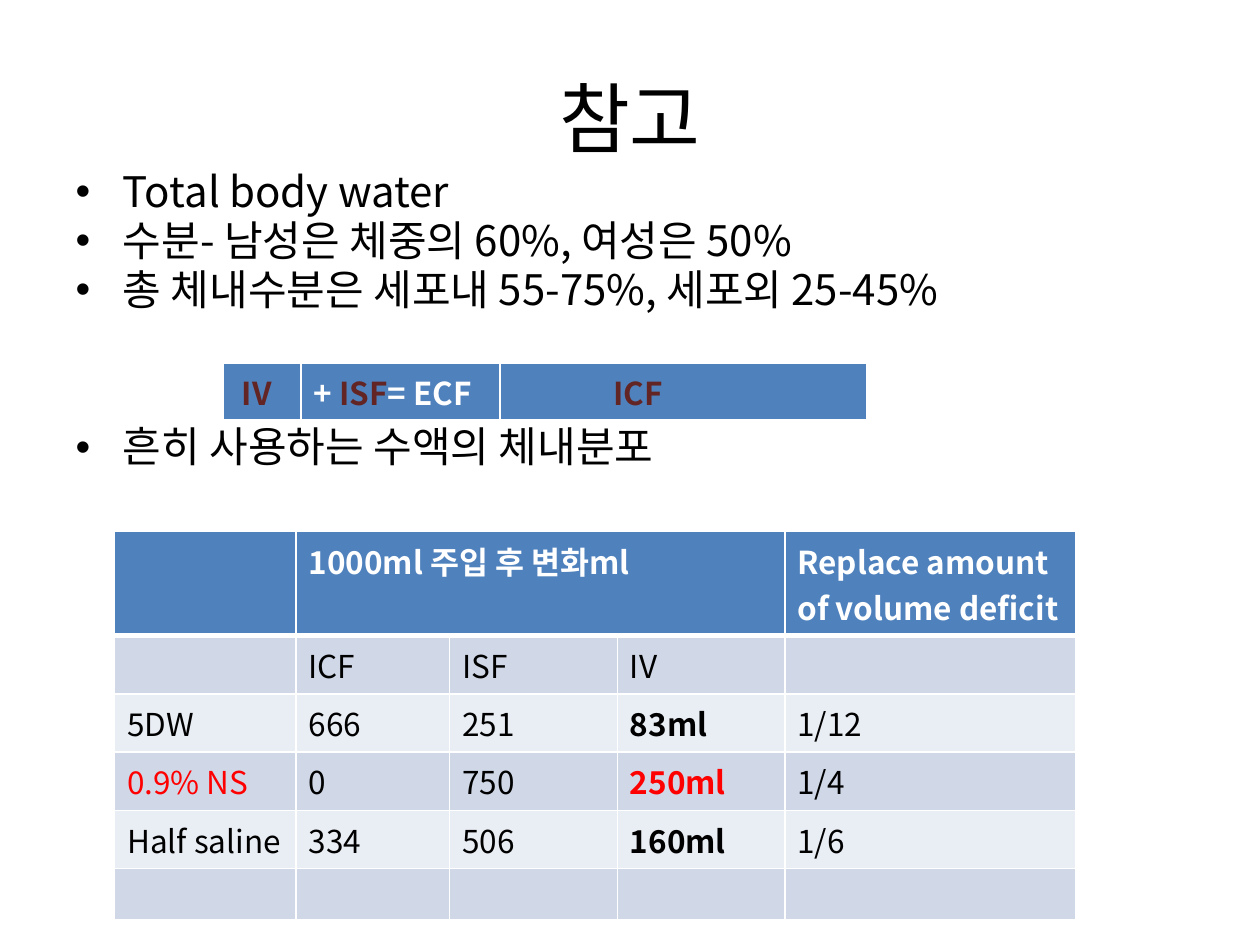
from dataclasses import dataclass

from lxml import etree
from pptx import Presentation
from pptx.dml.color import RGBColor
from pptx.enum.text import MSO_ANCHOR, PP_ALIGN
from pptx.oxml.ns import qn
from pptx.util import Inches, Pt

CENTER, MIDDLE = PP_ALIGN.CENTER, MSO_ANCHOR.MIDDLE

FONT = "Noto Sans CJK KR"
BLACK = RGBColor(0x00, 0x00, 0x00)
WHITE = RGBColor(0xFF, 0xFF, 0xFF)
RED = RGBColor(0xFF, 0x00, 0x00)
MAROON = RGBColor(0x63, 0x25, 0x23)
BLUE = RGBColor(0x4F, 0x81, 0xBD)
BAND_DARK = RGBColor(0xD0, 0xD8, 0xE8)
BAND_LIGHT = RGBColor(0xE9, 0xED, 0xF4)


@dataclass(frozen=True)
class Run:
    text: str
    color: RGBColor = BLACK
    bold: bool = False


@dataclass(frozen=True)
class Bullet:
    text: str
    space_before: float = 2


@dataclass(frozen=True)
class Compartment:
    width: float
    indent: float
    runs: tuple[Run, ...]


def add_run(paragraph, content: Run, size: float) -> None:
    run = paragraph.add_run()
    run.text = content.text
    font = run.font
    font.size, font.bold, font.name = Pt(size), content.bold, FONT
    font.color.rgb = content.color
    # Korean glyphs take the East Asian typeface
    east_asian = etree.SubElement(run._r.get_or_add_rPr(), qn("a:ea"))
    east_asian.set("typeface", FONT)


def place(shape, left: float, top: float, width: float, height: float) -> None:
    shape.left, shape.top = Inches(left), Inches(top)
    shape.width, shape.height = Inches(width), Inches(height)


def set_borders(cell, bottom: float = 1, top: float = 1) -> None:
    properties = cell._tc.get_or_add_tcPr()
    sides = {"a:lnL": 1, "a:lnR": 1, "a:lnT": top, "a:lnB": bottom}
    for position, (tag, points) in enumerate(sides.items()):
        line = etree.Element(qn(tag), w=str(Pt(points)))
        fill = etree.SubElement(line, qn("a:solidFill"))
        etree.SubElement(fill, qn("a:srgbClr"), val=str(WHITE))
        properties.insert(position, line)


def fill_cell(cell, runs: tuple[Run, ...], color: RGBColor) -> None:
    cell.fill.solid()
    cell.fill.fore_color.rgb = color
    for content in runs:
        add_run(cell.text_frame.paragraphs[0], content, 18)


def add_grid(slide, left: float, top: float, widths: list[float], heights: list[float]):
    table = slide.shapes.add_table(
        len(heights), len(widths), Inches(left), Inches(top),
        Inches(sum(widths)), Inches(sum(heights)),
    ).table
    for column, width in zip(table.columns, widths):
        column.width = Inches(width)
    for row, height in zip(table.rows, heights):
        row.height = Inches(height)
    return table


def add_compartment_bar(slide, compartments: list[Compartment]) -> None:
    bar = add_grid(slide, 1.77, 2.88, [part.width for part in compartments], [0.41])
    for column, part in enumerate(compartments):
        cell = bar.cell(0, column)
        fill_cell(cell, part.runs, BLUE)
        cell.margin_left = Inches(part.indent)
        set_borders(cell, bottom=3)


def add_fluid_table(slide, rows: list[list[Run]]) -> None:
    heights = [0.81] + [0.35] * (len(rows) - 1)
    table = add_grid(slide, 0.91, 4.22, [1.44, 1.22, 1.33, 1.33, 2.31], heights)
    for row, contents in enumerate(rows):
        band = BLUE if row == 0 else BAND_DARK if row % 2 else BAND_LIGHT
        for column, content in enumerate(contents):
            cell = table.cell(row, column)
            fill_cell(cell, (content,) if content.text else (), band)
            set_borders(cell, bottom=3 if row == 0 else 1, top=3 if row == 1 else 1)
    table.cell(0, 1).merge(table.cell(0, 3))


def fluid_row(name: str, icf: str, isf: str, iv: str, share: str,
              accent: RGBColor = BLACK) -> list[Run]:
    return [Run(name, accent), Run(icf), Run(isf), Run(iv, accent, True), Run(share)]


BULLETS = [
    Bullet("Total body water"),
    Bullet("수분- 남성은 체중의 60%, 여성은 50%"),
    Bullet("총 체내수분은 세포내 55-75%, 세포외 25-45%"),
    Bullet("흔히 사용하는 수액의 체내분포", space_before=64),  # room for the bar
]
COMPARTMENTS = [
    Compartment(0.62, 0.15, (Run("IV", MAROON, True),)),
    Compartment(1.58, 0.1, (Run("+ ", WHITE, True), Run("ISF", MAROON, True),
                            Run("= ECF", WHITE, True))),
    Compartment(2.91, 0.9, (Run("ICF", MAROON, True),)),
]
EMPTY = Run("")
FLUIDS = [
    [EMPTY, Run("1000ml 주입 후 변화ml", WHITE, True), EMPTY, EMPTY,
     Run("Replace amount of volume deficit", WHITE, True)],
    [EMPTY, Run("ICF"), Run("ISF"), Run("IV"), EMPTY],
    fluid_row("5DW", "666", "251", "83ml", "1/12"),
    fluid_row("0.9% NS", "0", "750", "250ml", "1/4", RED),
    fluid_row("Half saline", "334", "506", "160ml", "1/6"),
    [EMPTY] * 5,
]


def main() -> None:
    presentation = Presentation()
    presentation.slide_width, presentation.slide_height = Inches(10), Inches(7.5)
    slide = presentation.slides.add_slide(presentation.slide_layouts[1])

    # Title
    title = slide.shapes.title
    place(title, 0.5, 0.3, 9, 1.25)
    title.text_frame.vertical_anchor = MIDDLE
    heading = title.text_frame.paragraphs[0]
    heading.alignment = CENTER
    add_run(heading, Run("참고"), 44)

    # Body water facts
    body = slide.placeholders[1]
    place(body, 0.5, 1.31, 9, 5.39)
    for index, bullet in enumerate(BULLETS):
        frame = body.text_frame
        paragraph = frame.add_paragraph() if index else frame.paragraphs[0]
        paragraph.line_spacing = 0.9
        paragraph.space_before = Pt(bullet.space_before)
        add_run(paragraph, Run(bullet.text), 24)

    # Fluid distribution and compartments
    add_fluid_table(slide, FLUIDS)
    add_compartment_bar(slide, COMPARTMENTS)

    presentation.save("out.pptx")


if __name__ == "__main__":
    main()
